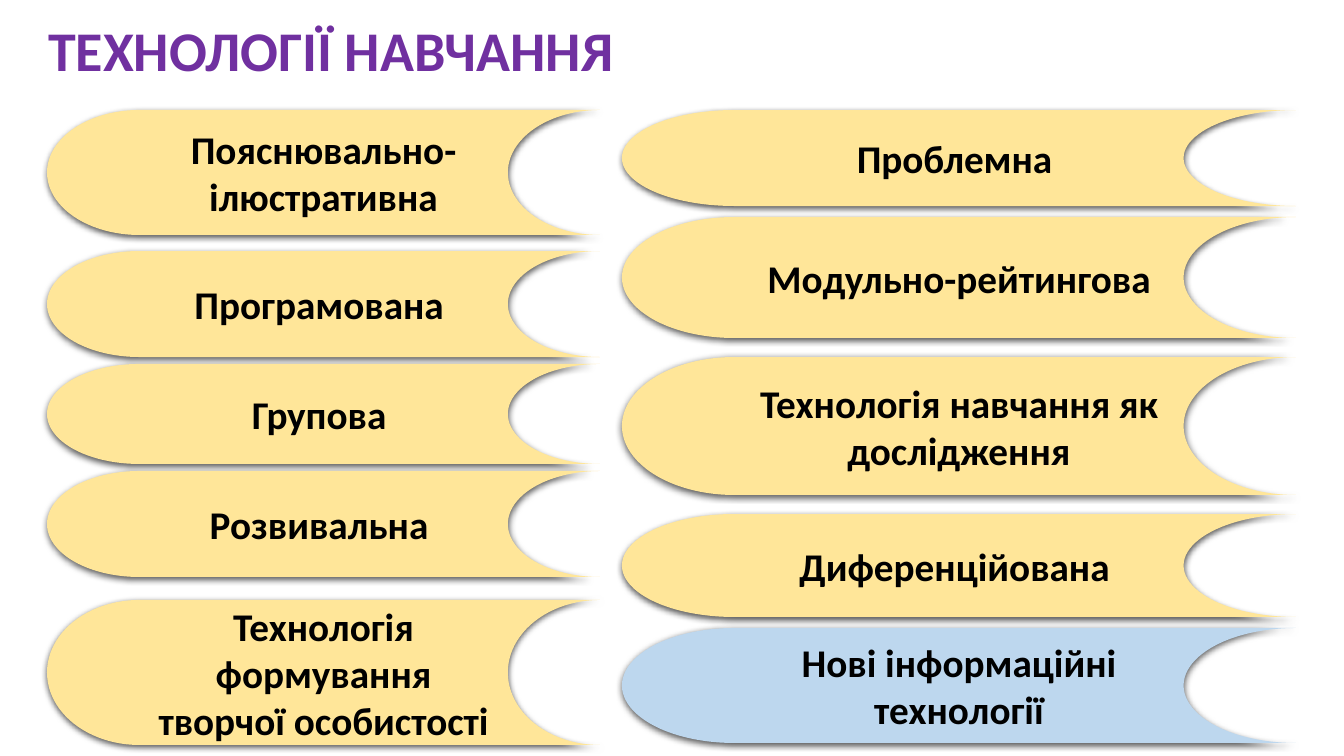
import pptx
import pptx.util
import pptx.dml.color
import pptx.enum.shapes
import pptx.enum.text
import pptx.oxml
import pptx.oxml.ns

# Content: each card is (text, top, height, colour name), lengths in px
TITLE = "ТЕХНОЛОГІЇ НАВЧАННЯ"
COLUMNS = [
    {"left": 47, "width": 553, "cards": [
        ("Пояснювально-ілюстративна", 110, 125, "yellow"),
        ("Програмована ", 251, 106, "yellow"),
        ("Групова ", 364, 100, "yellow"),
        ("Розвивальна ", 471, 106, "yellow"),
        ("Технологія формування творчої особистості", 600, 145, "yellow"),
    ]},
    {"left": 622, "width": 674, "cards": [
        ("Проблемна ", 110, 96, "yellow"),
        ("Модульно-рейтингова", 217, 121, "yellow"),
        ("Технологія навчання як дослідження", 357, 138, "yellow"),
        ("Диференційована ", 514, 103, "yellow"),
        ("Нові інформаційні технології", 628, 115, "blue"),
    ]},
]
COLOURS = {"title": "7030A0", "yellow": "FFE699", "blue": "BDD7EE", "text": "000000"}
FONT = "Calibri"
SHADOW = (
    f'<a:outerShdw {pptx.oxml.ns.nsdecls("a")} blurRad="57150" dist="19050" '
    'dir="5400000" algn="ctr" rotWithShape="0">'
    '<a:srgbClr val="000000"><a:alpha val="63000"/></a:srgbClr></a:outerShdw>'
)


def px(length):
    return pptx.util.Emu(round(length * 914400 / 100.8))


def colour(name):
    return pptx.dml.color.RGBColor.from_string(COLOURS[name])


def write(shape, text, size, colour_name, alignment):
    frame = shape.text_frame
    frame.text = text
    frame.word_wrap = True
    frame.auto_size = pptx.enum.text.MSO_AUTO_SIZE.NONE
    frame.vertical_anchor = pptx.enum.text.MSO_ANCHOR.MIDDLE
    para = frame.paragraphs[0]
    para.alignment = alignment
    para.font.name = FONT
    para.font.size = pptx.util.Pt(size)
    para.font.bold = True
    para.font.color.rgb = colour(colour_name)


def add_card(page, left, width, text, top, height, fill):
    card = page.shapes.add_shape(
        pptx.enum.shapes.MSO_SHAPE.FLOWCHART_STORED_DATA,
        px(left), px(top), px(width), px(height))
    card.fill.solid()
    card.fill.fore_color.rgb = colour(fill)
    card.line.fill.background()
    # Soft shadow straight below the card
    card.shadow.inherit = False
    effects = card.element.spPr.find(pptx.oxml.ns.qn("a:effectLst"))
    effects.append(pptx.oxml.parse_xml(SHADOW))
    write(card, text, 28, "text", pptx.enum.text.PP_ALIGN.CENTER)


def main():
    deck = pptx.Presentation()
    deck.slide_width, deck.slide_height = px(1344), px(756)
    page = deck.slides.add_slide(deck.slide_layouts.get_by_name("Title Only"))

    # Title
    title = page.shapes.title
    title.left, title.top, title.width, title.height = px(38), px(0), px(1010), px(98)
    write(title, TITLE, 40, "title", pptx.enum.text.PP_ALIGN.LEFT)

    # Two columns of cards
    for column in COLUMNS:
        for card in column["cards"]:
            add_card(page, column["left"], column["width"], *card)

    deck.save("out.pptx")


if __name__ == "__main__":
    main()
